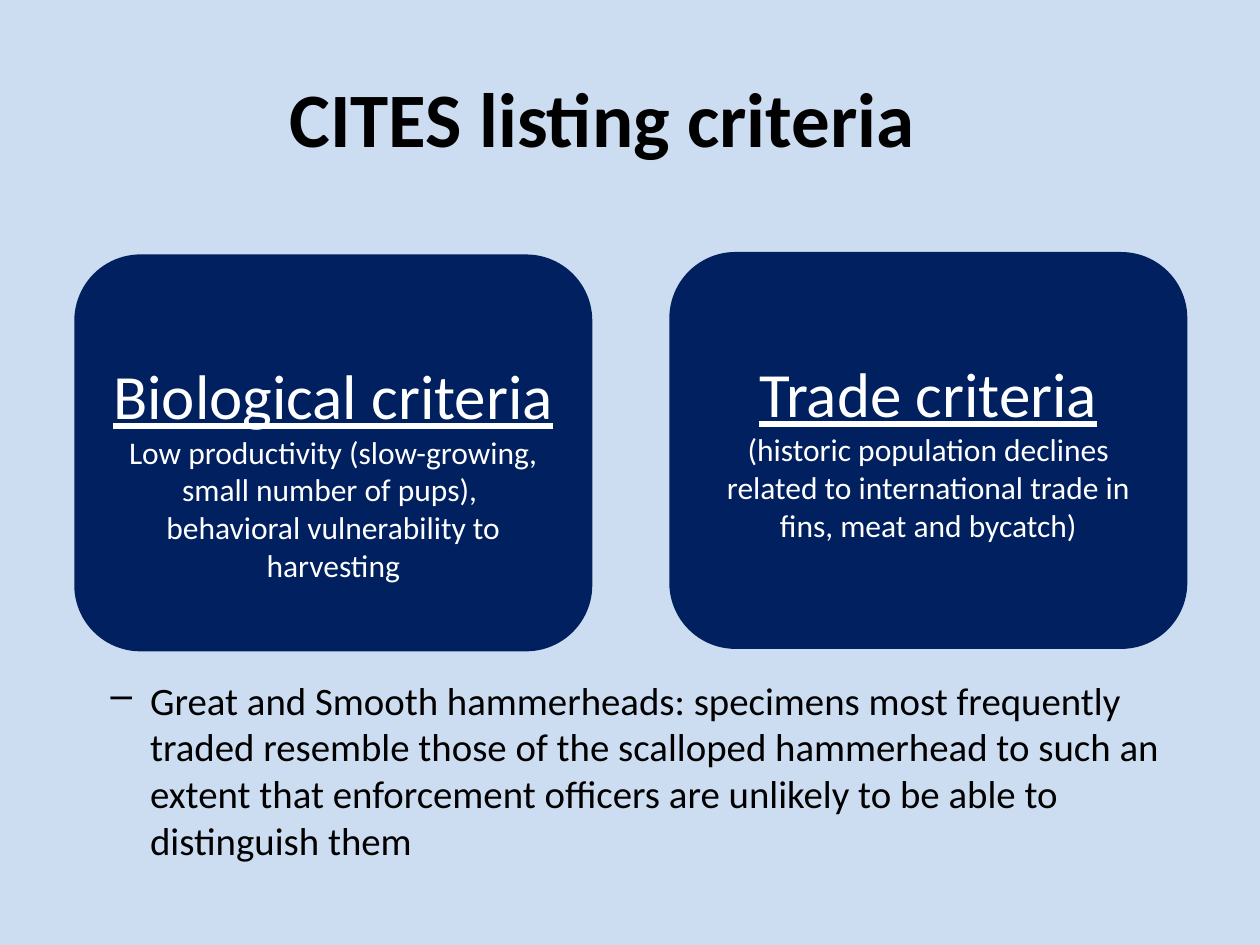
from dataclasses import dataclass

from lxml.etree import SubElement
from pptx import Presentation
from pptx.dml.color import RGBColor
from pptx.enum.shapes import MSO_SHAPE
from pptx.enum.text import MSO_ANCHOR, PP_ALIGN
from pptx.oxml.ns import qn
from pptx.util import Pt


@dataclass(frozen=True)
class Theme:
    font: str = "Calibri"
    background: RGBColor = RGBColor(0xCC, 0xDD, 0xF2)
    card: RGBColor = RGBColor(0x00, 0x20, 0x60)
    dark: RGBColor = RGBColor(0x00, 0x00, 0x00)
    light: RGBColor = RGBColor(0xFF, 0xFF, 0xFF)
    title_size: float = 44
    heading_size: float = 36
    detail_size: float = 18
    note_size: float = 22.2


theme = Theme()


def set_font(para, size, color):
    para.font.name = theme.font
    para.font.size = Pt(size)
    para.font.color.rgb = color


deck = Presentation()
deck.slide_width, deck.slide_height = Pt(720), Pt(540)
page = deck.slides.add_slide(deck.slide_layouts[5])
page.background.fill.solid()
page.background.fill.fore_color.rgb = theme.background

# Title
title = page.shapes.title
title.left, title.top, title.width, title.height = Pt(14.4), Pt(21.6), Pt(669.6), Pt(90)
title.text_frame.text = "CITES listing criteria "
title.text_frame.vertical_anchor = MSO_ANCHOR.MIDDLE
para = title.text_frame.paragraphs[0]
para.alignment = PP_ALIGN.CENTER
set_font(para, theme.title_size, theme.dark)
para.font.bold = True

# Note below the cards
note = page.shapes.add_textbox(Pt(20.2), Pt(383), Pt(692), Pt(79.2))
note.text_frame.word_wrap = True
para = note.text_frame.paragraphs[0]
para.text = (
    "Great and Smooth hammerheads: specimens most frequently traded resemble "
    "those of the scalloped hammerhead to such an extent that enforcement "
    "officers are unlikely to be able to distinguish them"
)
properties = para._p.get_or_add_pPr()
properties.set("marL", str(Pt(58.5)))
properties.set("indent", str(Pt(-22.5)))
SubElement(properties, qn("a:buChar"), char="–")
set_font(para, theme.note_size, theme.dark)

# Criteria cards: left, top, heading, details
cards = [
    (42.5, 145.4, "Biological criteria", [
        "Low productivity (slow-growing,",
        "small number of pups), \vbehavioral vulnerability to harvesting",
    ]),
    (382.5, 144, "Trade criteria", [
        "(historic population declines related to international trade in "
        "fins, meat and bycatch)",
    ]),
]
for left, top, heading, details in cards:
    card = page.shapes.add_shape(
        MSO_SHAPE.ROUNDED_RECTANGLE, Pt(left), Pt(top), Pt(296), Pt(226.8))
    card.shadow.inherit = False
    card.fill.solid()
    card.fill.fore_color.rgb = theme.card
    card.line.fill.background()
    frame = card.text_frame
    frame.word_wrap = True
    frame.vertical_anchor = MSO_ANCHOR.TOP
    frame.margin_top = Pt(47.5)
    frame.text = "\n".join([heading, *details])
    for para in frame.paragraphs:
        para.alignment = PP_ALIGN.CENTER
        set_font(para, theme.detail_size, theme.light)
    frame.paragraphs[0].font.size = Pt(theme.heading_size)
    frame.paragraphs[0].font.underline = True

deck.save("out.pptx")
